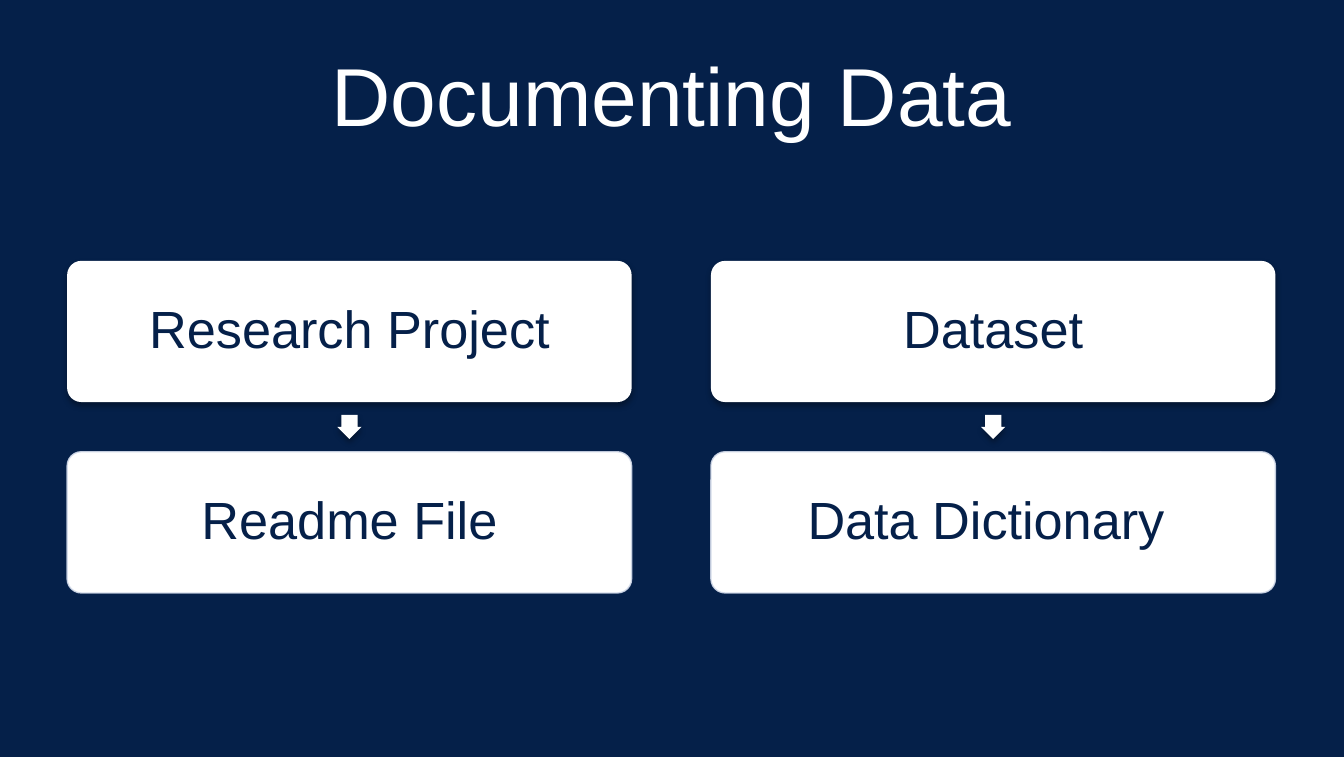
import dataclasses
import pptx
import pptx.dml.color
import pptx.enum.shapes
import pptx.enum.text
import pptx.oxml
import pptx.oxml.ns
import pptx.util

Inches = pptx.util.Inches
Kind = pptx.enum.shapes.MSO_SHAPE
NS = pptx.oxml.ns.nsdecls("a")
SHADE = (
    f'<a:effectLst {NS}><a:outerShdw blurRad="40000" dist="23000" dir="5400000" rotWithShape="0">'
    '<a:srgbClr val="000000"><a:alpha val="35000"/></a:srgbClr></a:outerShdw></a:effectLst>'
)


@dataclasses.dataclass(frozen=True)
class Theme:
    navy: str = "052049"
    white: str = "FFFFFF"
    edge: str = "D0D8E8"
    font: str = "Arial"
    head: int = 44
    body: int = 28


class Deck:
    """Draw styled elements on the current slide."""

    def __init__(self, theme, slide):
        self.theme = theme
        self.slide = slide
        self.paint(slide.background.fill, theme.navy)

    def paint(self, fill, color):
        fill.solid()
        fill.fore_color.rgb = pptx.dml.color.RGBColor.from_string(color)

    def label(self, shape, text, size, color):
        frame = shape.text_frame
        frame.text = text
        frame.word_wrap = True
        frame.vertical_anchor = pptx.enum.text.MSO_ANCHOR.MIDDLE
        line = frame.paragraphs[0]
        line.alignment = pptx.enum.text.PP_ALIGN.CENTER
        for run in line.runs:
            run.font.name = self.theme.font
            run.font.size = pptx.util.Pt(size)
            self.paint(run.font.fill, color)
        return frame

    def title(self, text, *area):
        box = self.slide.shapes.add_textbox(*map(Inches, area))
        self.label(box, text, self.theme.head, self.theme.white)

    def shape(self, kind, area, shade):
        item = self.slide.shapes.add_shape(kind, *map(Inches, area))
        item.shadow.inherit = False
        self.paint(item.fill, self.theme.white)
        item.line.fill.background()
        if shade:
            props = item.element.spPr
            props.replace(props.find(pptx.oxml.ns.qn("a:effectLst")), pptx.oxml.parse_xml(SHADE))
        return item

    def card(self, text, area, shade):
        item = self.shape(Kind.ROUNDED_RECTANGLE, area, shade)
        item.adjustments[0] = 0.1
        if not shade:
            item.line.width = pptx.util.Pt(0.75)
            self.paint(item.line.fill, self.theme.edge)
            edge = item.element.spPr.find(pptx.oxml.ns.qn("a:ln"))
            tint = edge.find(".//" + pptx.oxml.ns.qn("a:srgbClr"))
            tint.append(pptx.oxml.parse_xml(f'<a:alpha {NS} val="90000"/>'))
        frame = self.label(item, text, self.theme.body, self.theme.navy)
        frame.margin_left = frame.margin_right = Inches(0.04)
        frame.margin_top = frame.margin_bottom = Inches(0.04)
        frame.paragraphs[0].line_spacing = 0.9

    def arrow(self, mid, top, size):
        item = self.shape(Kind.RIGHT_ARROW, (mid - size / 2, top, size, size), True)
        item.adjustments[0] = 0.67
        item.rotation = 90


def main():
    show = pptx.Presentation()
    show.slide_width, show.slide_height = Inches(10), Inches(5.63)
    deck = Deck(Theme(), show.slides.add_slide(show.slide_layouts[6]))
    deck.title("Documenting Data", 0.5, 0.23, 9, 0.94)

    pairs = [("Research Project", "Readme File"), ("Dataset", "Data Dictionary ")]
    wide, high, tip = 4.2, 1.05, 0.18
    top, low = 1.94, 3.36
    gap = (low - top - high - tip) / 2
    for col, (source, record) in enumerate(pairs):
        left = 0.5 + col * 4.79
        deck.card(source, (left, top, wide, high), True)
        deck.arrow(left + wide / 2, top + high + gap, tip)
        deck.card(record, (left, low, wide, high), False)

    show.save("out.pptx")


if __name__ == "__main__":
    main()
